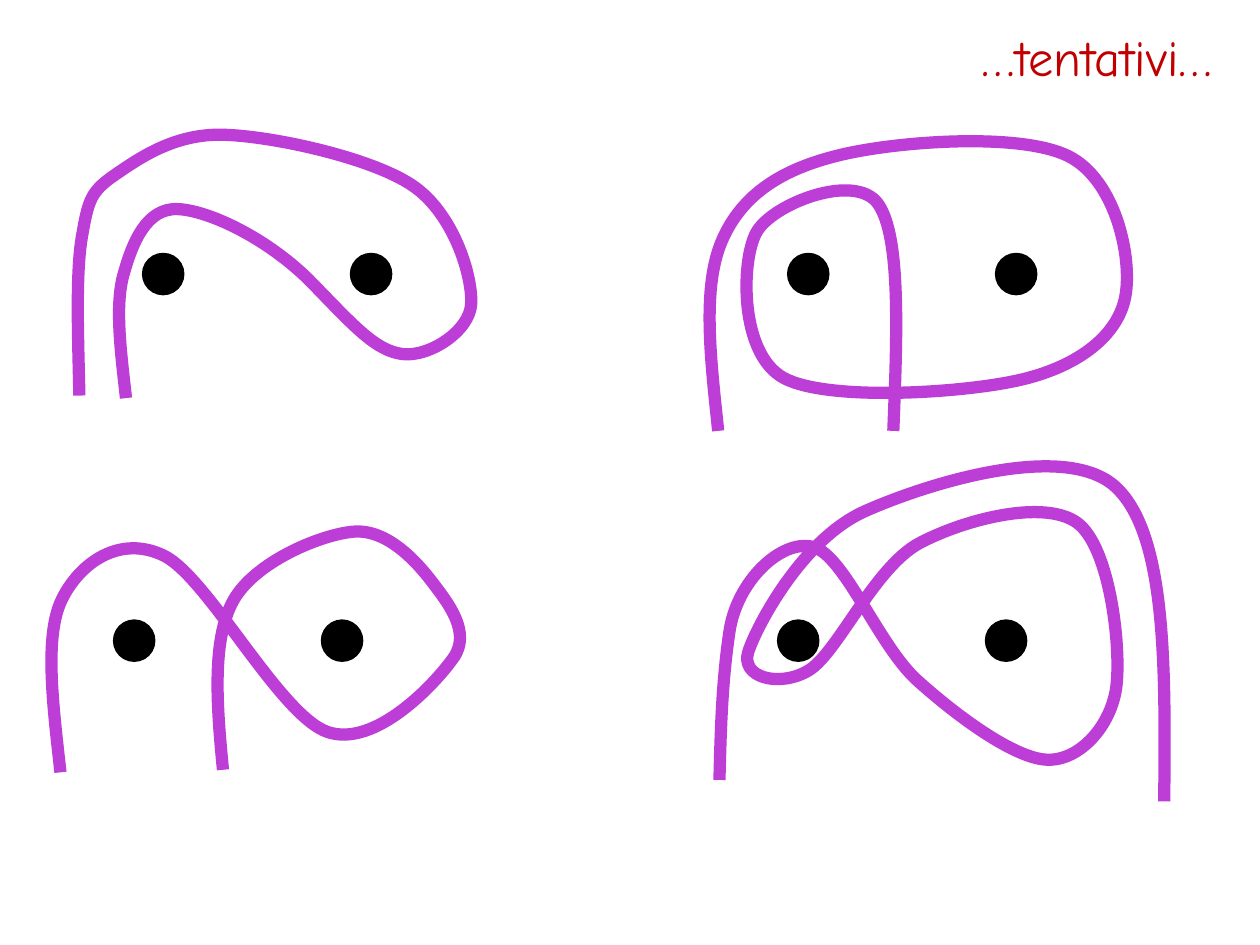
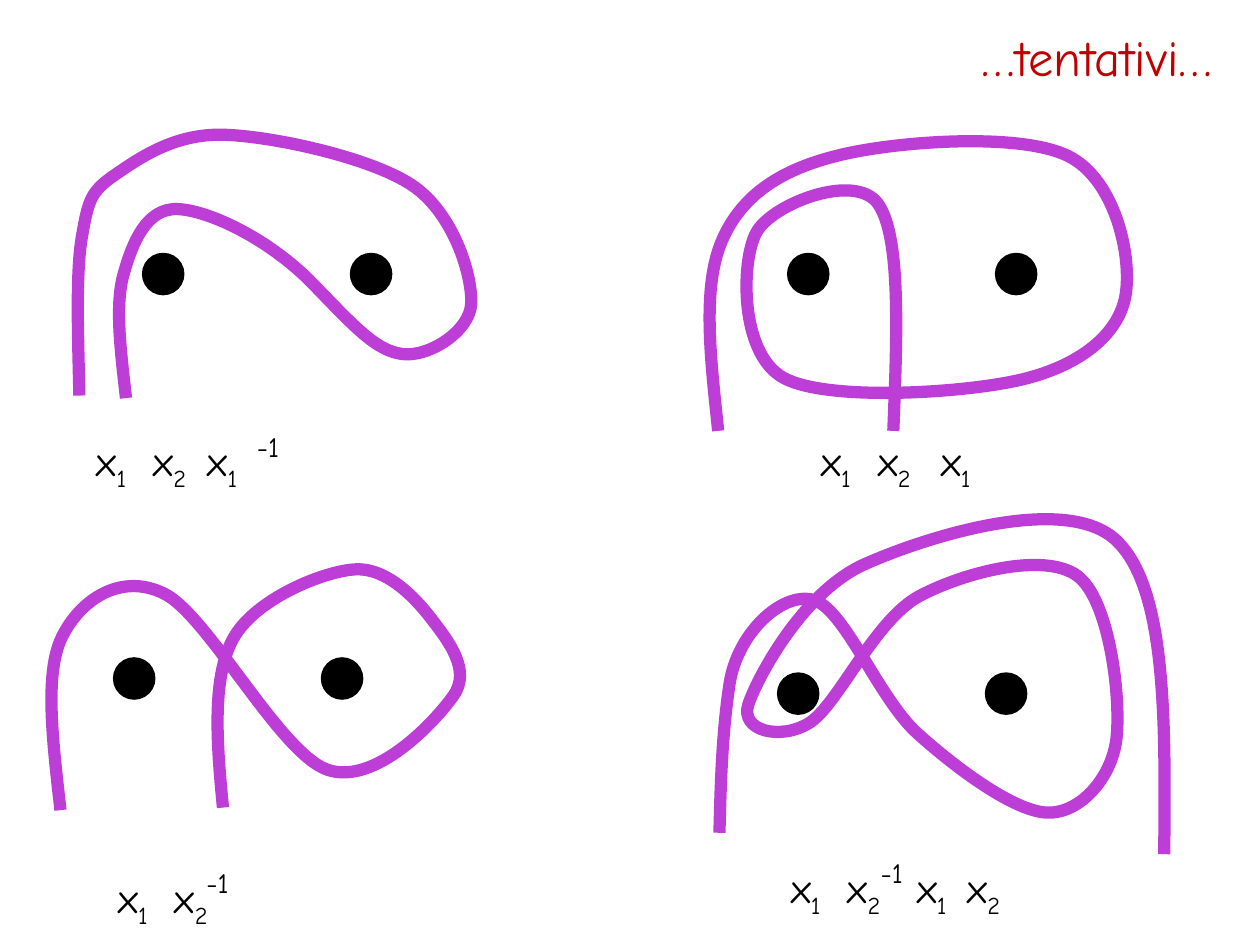
from dataclasses import dataclass, field

from lxml.etree import SubElement
from pptx import Presentation
from pptx.dml.color import RGBColor
from pptx.enum.shapes import MSO_SHAPE as Shape
from pptx.enum.text import MSO_ANCHOR as Anchor, MSO_AUTO_SIZE as AutoSize, PP_ALIGN as Align
from pptx.oxml.ns import qn
from pptx.slide import Slide
from pptx.util import Inches, Pt

Point = tuple[int, int]

# Shared look: the slide is a grid of 10 columns by 7.5 rows
CELL = Inches(1)
COLUMNS, ROWS = 10, 7.5
FONT = "Comic Neue"
BLACK, RED, PURPLE = "000000", "C00000", "BD3DD7"
TITLE = "…tentativi…"
TITLE_AREA = (0.35, 0.13, 9.37, 0.63)
DOT_SIZE, DOT_GAP = 0.31, 1.65
UPPER_DOTS, LOWER_DOTS = 2.02, 4.93
WIDE_LABEL = 2.68
FACTOR_STEP = 0.45
TITLE_LAYOUT = 5


@dataclass(frozen=True)
class Label:
    """Word of x factors; each factor after the first starts at a tab stop."""
    left: float
    top: float
    width: float
    indices: str
    stops: tuple[float, ...]
    exponent: tuple[float, float] | None = None


@dataclass(frozen=True)
class Loop:
    """Smooth curve around two dots; knots are in hundredths of a cell."""
    dot_left: float
    dot_top: float
    knots: tuple[Point, ...]
    label: Label
    drop: float = 0  # how far the loop moves down when labels are shown
    turns: dict[int, Point] = field(default_factory=dict)  # tangents set by hand


LOOPS = (
    Loop(1.14, UPPER_DOTS,
         ((63, 314), (65, 188), (91, 139), (177, 107), (327, 147), (374, 241),
          (319, 281), (248, 225), (141, 166), (98, 218), (100, 316)),
         Label(0.67, 3.4, WIDE_LABEL, "121", (FACTOR_STEP, 0.88), (1.94, 3.36)),
         turns={7: (-34, -35)}),
    Loop(6.26, UPPER_DOTS,
         ((570, 342), (573, 191), (667, 123), (848, 124), (893, 236), (812, 301),
          (622, 300), (600, 185), (697, 162), (709, 342)),
         Label(6.42, 3.4, WIDE_LABEL, "121", (FACTOR_STEP, 0.95))),
    Loop(0.91, LOWER_DOTS,
         ((48, 613), (49, 476), (130, 441), (260, 581), (360, 522), (343, 462),
          (281, 422), (185, 477), (177, 611)),
         Label(0.84, 6.87, 1.25, "12", (FACTOR_STEP,), (1.54, 6.82)), drop=0.3),
    Loop(6.18, LOWER_DOTS,
         ((571, 619), (579, 501), (645, 434), (728, 540), (831, 603), (886, 545),
          (855, 415), (730, 431), (642, 532), (594, 517), (686, 406), (886, 387),
          (924, 636)),
         Label(6.18, 6.79, WIDE_LABEL, "1212", (FACTOR_STEP, 1, 1.4), (6.89, 6.74)),
         drop=0.42, turns={1: (6, -40)}),
)


def grid(*lengths: float) -> list[int]:
    return [round(length * CELL) for length in lengths]


def color(hex_value: str) -> RGBColor:
    return RGBColor.from_string(hex_value)


def add_span(para, text: str, *, size: float, ink: str = BLACK, baseline: int = 0) -> None:
    span = para.add_run()
    span.text = text
    span.font.name, span.font.size = FONT, Pt(size)
    span.font.color.rgb = color(ink)
    if baseline:
        span._r.get_or_add_rPr().set("baseline", str(baseline * 1000))


def add_box(slide: Slide, left: float, top: float, width: float, height: float):
    """Add a wrapping text box and return its first paragraph."""
    frame = slide.shapes.add_textbox(*grid(left, top, width, height)).text_frame
    frame.word_wrap = True
    frame.auto_size = AutoSize.SHAPE_TO_FIT_TEXT
    return frame.paragraphs[0]


def add_title(slide: Slide) -> None:
    title = slide.shapes.title
    title.left, title.top, title.width, title.height = grid(*TITLE_AREA)
    frame = title.text_frame
    frame.auto_size = AutoSize.NONE
    frame.vertical_anchor = Anchor.MIDDLE
    para = frame.paragraphs[0]
    para.alignment = Align.RIGHT
    add_span(para, TITLE, size=28.8, ink=RED)


def add_dot(slide: Slide, left: float, top: float) -> None:
    dot = slide.shapes.add_shape(Shape.OVAL, *grid(left, top, DOT_SIZE, DOT_SIZE))
    dot.shadow.inherit = False
    dot.fill.solid()
    dot.fill.fore_color.rgb = color(BLACK)
    dot.line.color.rgb = color(BLACK)
    dot.line.width = Pt(2)


def middle(first: Point, second: Point) -> Point:
    return tuple(round((a + b) / 2) for a, b in zip(first, second))


def smooth(loop: Loop) -> list[Point]:
    """Bézier points through the knots; a tangent is a sixth of its neighbours' distance."""
    knots = loop.knots
    points = [knots[0]]
    for number in range(1, len(knots) - 1):
        x, y = knots[number]
        before, after = knots[number - 1], knots[number + 1]
        sixth = tuple((b - a) / 6 for a, b in zip(before, after))
        dx, dy = loop.turns.get(number, sixth)
        points += [(round(x - dx), round(y - dy)), (x, y), (round(x + dx), round(y + dy))]
    # The open ends aim at the nearest control point
    start, end = middle(points[0], points[1]), middle(points[-1], knots[-1])
    return [points[0], start, *points[1:], end, knots[-1]]


def add_curve(slide: Slide, loop: Loop, drop: float) -> None:
    start, *others = smooth(loop)
    builder = slide.shapes.build_freeform(*start, scale=CELL / 100)
    builder.add_line_segments(others, close=False)
    curve = builder.convert_to_shape(0, round(drop * CELL))
    curve.shadow.inherit = False
    curve.fill.background()
    curve.line.color.rgb = color(PURPLE)
    curve.line.width = Pt(7)
    # Every three segments become one Bézier arc
    outline = next(curve._element.iter(qn("a:path")))
    segments = outline.findall(qn("a:lnTo"))
    for first in range(0, len(segments), 3):
        arc = SubElement(outline, qn("a:cubicBezTo"))
        for segment in segments[first:first + 3]:
            arc.append(segment[0])
            outline.remove(segment)


def add_label(slide: Slide, label: Label) -> None:
    para = add_box(slide, label.left, label.top, label.width, 0.5)
    tabs = SubElement(para._p.get_or_add_pPr(), qn("a:tabLst"))
    for stop in label.stops:
        SubElement(tabs, qn("a:tab"), pos=str(grid(stop)[0]), algn="l")
    for position, index in enumerate(label.indices):
        add_span(para, "\tx" if position else "x", size=24)
        add_span(para, index, size=24, baseline=-25)
    if label.exponent:
        add_span(add_box(slide, *label.exponent, 0.55, 0.37), "-1", size=16)


def add_loops_slide(deck, *, labelled: bool) -> None:
    page = deck.slides.add_slide(deck.slide_layouts[TITLE_LAYOUT])
    add_title(page)
    for loop in LOOPS:
        drop = loop.drop if labelled else 0
        for number in range(2):
            add_dot(page, loop.dot_left + number * DOT_GAP, loop.dot_top + drop)
        add_curve(page, loop, drop)
    if labelled:
        for loop in LOOPS:
            add_label(page, loop.label)


def main() -> None:
    deck = Presentation()
    deck.slide_width, deck.slide_height = grid(COLUMNS, ROWS)
    # First the bare attempts, then the same with their words
    for labelled in (False, True):
        add_loops_slide(deck, labelled=labelled)
    deck.save("out.pptx")


if __name__ == "__main__":
    main()
